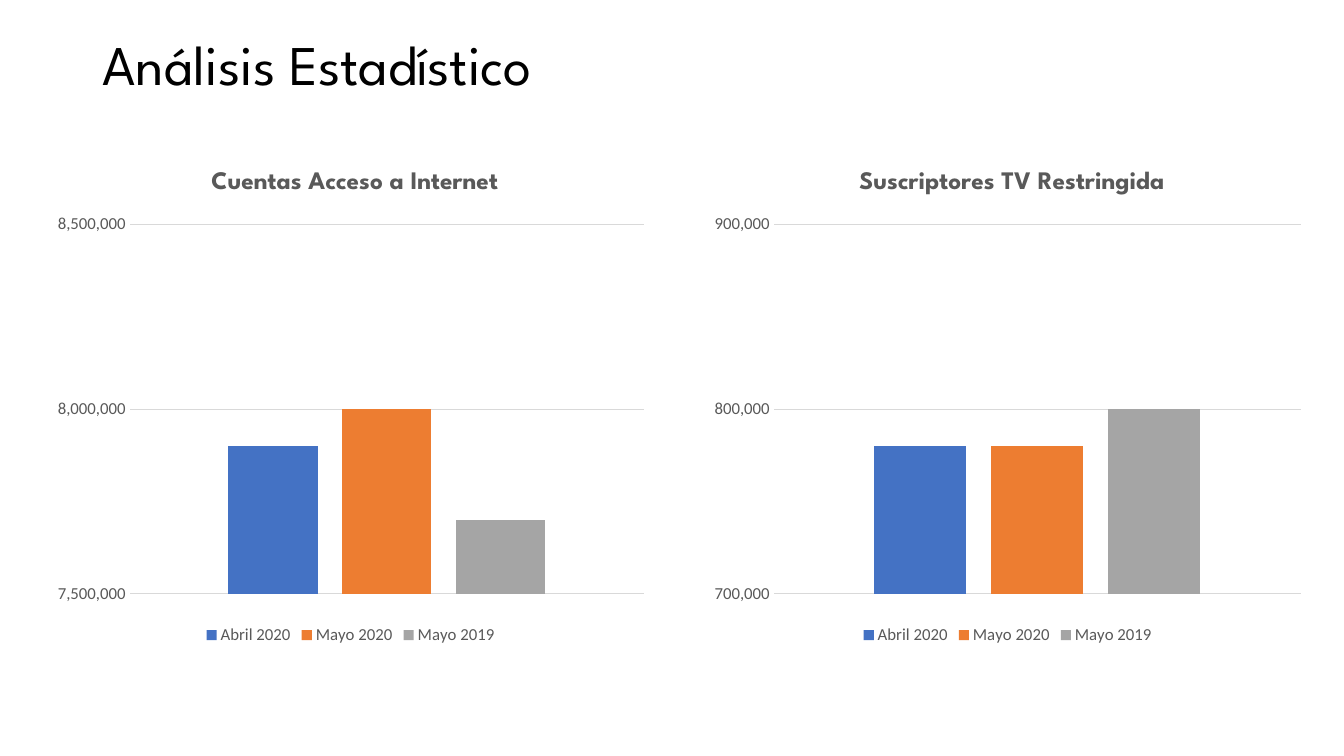
from lxml.etree import SubElement
from pptx import Presentation
from pptx.chart.data import CategoryChartData
from pptx.dml.color import RGBColor
from pptx.enum.chart import XL_CHART_TYPE, XL_LEGEND_POSITION, XL_TICK_MARK
from pptx.enum.text import MSO_ANCHOR
from pptx.oxml.ns import qn
from pptx.util import Cm, Pt

# Content
HEADING = "Análisis Estadístico"
MONTHS = ["Abril 2020", "Mayo 2020", "Mayo 2019"]
STATISTICS = [
    {"title": "Cuentas Acceso a Internet", "values": [7900000, 8000000, 7700000],
     "scale": (7500000, 8500000, 500000), "title_left": Cm(4.07), "plot_left": Cm(2.13)},
    {"title": "Suscriptores TV Restringida", "values": [780000, 780000, 800000],
     "scale": (700000, 900000, 100000), "title_left": Cm(3.84), "plot_left": Cm(1.8)},
]

# Style
BLACK = RGBColor(0x00, 0x00, 0x00)
GRAY = RGBColor(0x59, 0x59, 0x59)
GRID = RGBColor(0xD9, 0xD9, 0xD9)
MONTH_COLORS = [RGBColor(0x44, 0x72, 0xC4), RGBColor(0xED, 0x7D, 0x31),
                RGBColor(0xA5, 0xA5, 0xA5)]
HEADING_FONT, LABEL_FONT = "League Spartan", "Calibri"

# Chart placement; title and plot are measured from the chart's corner
CHART_LEFT, CHART_TOP = Cm(1.14), Cm(3.94)
CHART_WIDTH, CHART_HEIGHT = Cm(15.39), Cm(12.42)
CHART_STEP = Cm(16.56)
TITLE_TOP = Cm(0.2)
PLOT_TOP, PLOT_HEIGHT, PLOT_RIGHT = Cm(1.71), Cm(9.32), Cm(15.08)


def style(font, name=LABEL_FONT, size=12, color=GRAY, bold=False):
    font.name, font.size, font.bold = name, Pt(size), bold
    font.color.rgb = color


def write(frame, text, line_spacing=None, **font_format):
    paragraph = frame.paragraphs[0]
    paragraph.line_spacing = line_spacing
    run = paragraph.add_run()
    run.text = text
    style(run.font, **font_format)


def place(part, position, left, top, width=None, height=None):
    """Fix the place of a chart part; position is where its layout element belongs."""
    layout = part.find(qn("c:layout"))
    if layout is None:
        layout = SubElement(part, qn("c:layout"))
        part.insert(position, layout)
    settings = {"xMode": "edge", "yMode": "edge",
                "x": left / CHART_WIDTH, "y": top / CHART_HEIGHT}
    if width:
        settings = {"layoutTarget": "inner", **settings,
                    "w": width / CHART_WIDTH, "h": height / CHART_HEIGHT}
    manual = SubElement(layout, qn("c:manualLayout"))
    for tag, value in settings.items():
        SubElement(manual, qn(f"c:{tag}")).set("val", str(value))


def add_statistic(slide, left, statistic):
    table = CategoryChartData(number_format="#,##0")
    table.categories = ["1"]
    for month, value in zip(MONTHS, statistic["values"]):
        table.add_series(month, [value])
    chart = slide.shapes.add_chart(XL_CHART_TYPE.COLUMN_CLUSTERED, left, CHART_TOP,
                                   CHART_WIDTH, CHART_HEIGHT, table).chart
    style(chart.font, size=10, color=BLACK)

    # Title and legend
    title = chart.chart_title
    write(title.text_frame, statistic["title"], name=HEADING_FONT, size=18, bold=True)
    title.include_in_layout = False
    place(title._element, 1, statistic["title_left"], TITLE_TOP)
    chart.has_legend = True
    chart.legend.position = XL_LEGEND_POSITION.BOTTOM
    chart.legend.include_in_layout = False
    style(chart.legend.font)

    # Axes
    chart.category_axis.visible = False
    axis = chart.value_axis
    axis.minimum_scale, axis.maximum_scale, axis.major_unit = statistic["scale"]
    axis.major_tick_mark = axis.minor_tick_mark = XL_TICK_MARK.NONE
    axis.format.line.fill.background()
    axis.major_gridlines.format.line.color.rgb = GRID
    axis.major_gridlines.format.line.width = Pt(0.75)
    axis.tick_labels.number_format = "#,##0"
    axis.tick_labels.number_format_is_linked = False
    style(axis.tick_labels.font)

    # Columns
    columns = chart.plots[0]
    columns.gap_width, columns.overlap = 219, -27
    columns.vary_by_categories = False
    for month, color in zip(columns.series, MONTH_COLORS):
        month.format.fill.solid()
        month.format.fill.fore_color.rgb = color
    plot_left = statistic["plot_left"]
    place(columns._element.getparent(), 0, plot_left, PLOT_TOP,
          PLOT_RIGHT - plot_left, PLOT_HEIGHT)


def main():
    deck = Presentation()
    deck.slide_width, deck.slide_height = Cm(33.87), Cm(19.05)
    slide = deck.slides.add_slide(deck.slide_layouts[6])

    # Heading
    heading = slide.shapes.add_textbox(Cm(2.34), Cm(0.53), Cm(15.65), Cm(2.34)).text_frame
    heading.word_wrap = True
    heading.vertical_anchor = MSO_ANCHOR.MIDDLE
    write(heading, HEADING, line_spacing=0.9, name=HEADING_FONT, size=40, color=BLACK)

    # Charts
    for column, statistic in enumerate(STATISTICS):
        add_statistic(slide, CHART_LEFT + column * CHART_STEP, statistic)

    deck.save("out.pptx")


if __name__ == "__main__":
    main()
